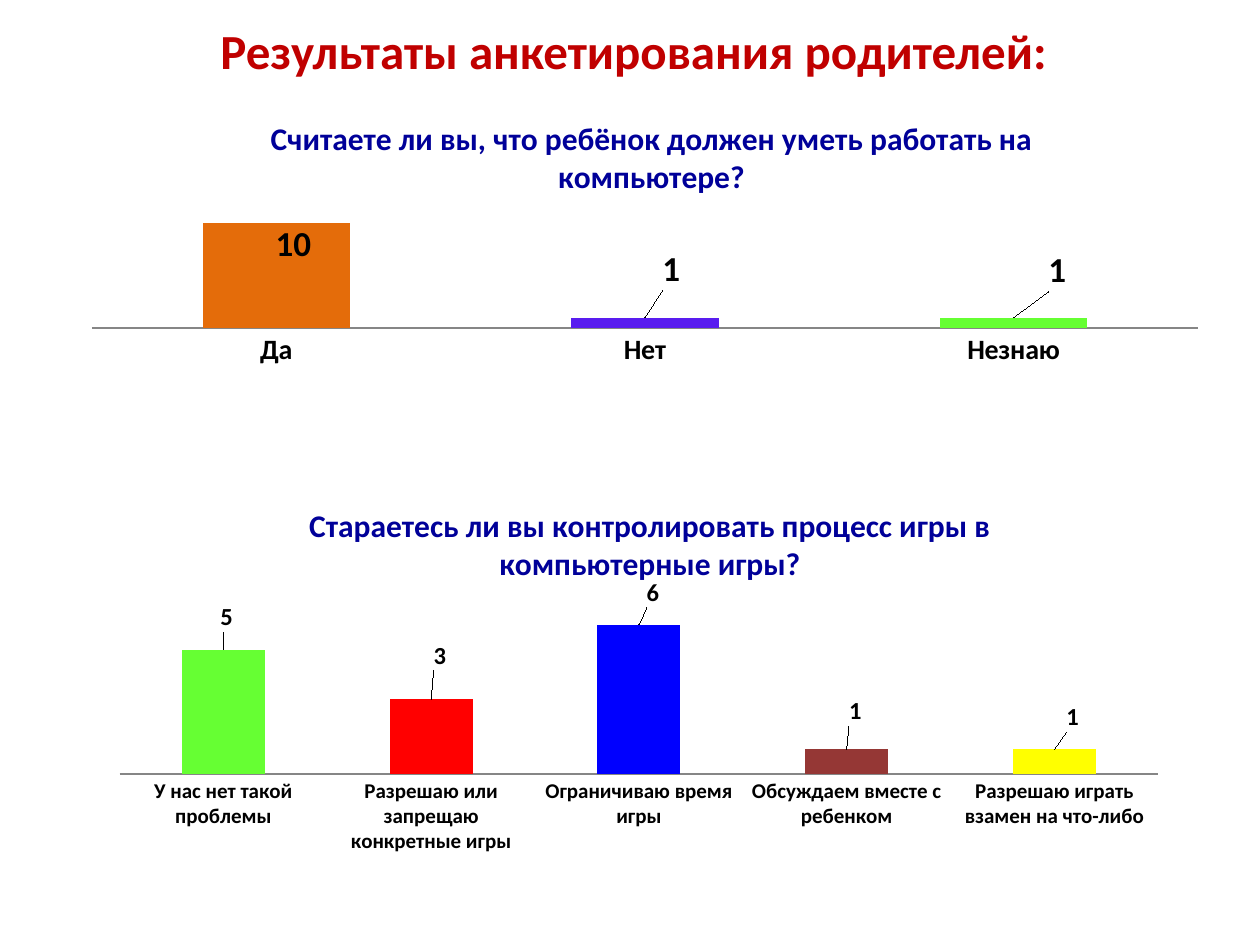
import pptx
import pptx.chart.data
import pptx.dml.color
import pptx.enum.chart
import pptx.enum.text
import pptx.oxml
import pptx.util

EMU_PER_PX = 914400 / 126
FONT = "Calibri"
COLORS = {
    "heading": "C00000", "question": "000099", "text": "000000", "axis": "868686",
    "orange": "E46C0A", "violet": "591DEF", "green": "66FF33", "red": "FF0000",
    "blue": "0000FF", "brown": "953735", "yellow": "FFFF00",
}


def style_font(font, size, color, bold=True):
    for name, value in {"name": FONT, "size": pptx.util.Pt(size), "bold": bold}.items():
        setattr(font, name, value)
    font.color.rgb = pptx.dml.color.RGBColor.from_string(COLORS[color])


def set_layout(parent, index, values, target=""):
    """Place a chart part by fractions of the chart size."""
    for old in parent.findall(pptx.oxml.ns.qn("c:layout")):
        parent.remove(old)
    tags = "".join(f'<c:{tag} val="{value}"/>' for tag, value in values.items())
    parent.insert(index, pptx.oxml.parse_xml(
        f'<c:layout {pptx.oxml.ns.nsdecls("c")}><c:manualLayout>'
        f'{target}{tags}</c:manualLayout></c:layout>'))


deck = pptx.Presentation()
deck.slide_width, deck.slide_height = pptx.util.Inches(10), pptx.util.Inches(7.5)
page = deck.slides.add_slide(deck.slide_layouts[5])

# Heading
title = page.shapes.title
for name, px in {"left": 73, "top": 16, "width": 1134, "height": 102}.items():
    setattr(title, name, round(px * EMU_PER_PX))
frame = title.text_frame
frame.margin_right = round(26 * EMU_PER_PX)
frame.margin_bottom = round(40 * EMU_PER_PX)
frame.vertical_anchor = pptx.enum.text.MSO_ANCHOR.MIDDLE
para = frame.paragraphs[0]
para.alignment = pptx.enum.text.PP_ALIGN.CENTER
span = para.add_run()
span.text = "Результаты анкетирования родителей:"
style_font(span.font, 28, "heading")

# Survey questions: each bar is (answer, votes, color, label shift in px)
charts = [
    {
        "question": "Считаете ли вы, что ребёнок должен уметь работать на компьютере?",
        "box": (69, 88, 1152, 286), "title_at": (0.17, 0.08), "plot": (0.4, 0.44),
        "maximum": 12, "axis_size": 16, "label_size": 20,
        "bars": [
            ("Да", 10, "orange", (17, 47)),
            ("Нет", 1, "violet", (26, -22)),
            ("Незнаю", 1, "green", (44, -21)),
        ],
    },
    {
        "question": "Стараетесь ли вы контролировать процесс игры в компьютерные игры?",
        "box": (98, 483, 1082, 378), "title_at": (0.19, 0.04), "plot": (0.31, 0.46),
        "maximum": 7, "axis_size": 12, "label_size": 14,
        "bars": [
            ("У нас нет такой проблемы", 5, "green", (3, -13)),
            ("Разрешаю или запрещаю конкретные игры", 3, "red", (9, -24)),
            ("Ограничиваю время игры", 6, "blue", (14, -12)),
            ("Обсуждаем вместе с ребенком", 1, "brown", (9, -18)),
            ("Разрешаю играть взамен на что-либо", 1, "yellow", (18, -12)),
        ],
    },
]

for survey in charts:
    bars = survey["bars"]
    data = pptx.chart.data.CategoryChartData()
    data.categories = [bar[0] for bar in bars]
    data.add_series("Series 1", [bar[1] for bar in bars])
    chart = page.shapes.add_chart(
        pptx.enum.chart.XL_CHART_TYPE.COLUMN_CLUSTERED,
        *[round(px * EMU_PER_PX) for px in survey["box"]], data).chart
    chart.has_legend = False
    style_font(chart.font, 10, "text", False)

    # Question above the bars
    chart.has_title = True
    para = chart.chart_title.text_frame.paragraphs[0]
    span = para.add_run()
    span.text = survey["question"]
    style_font(span.font, 18, "question")
    x, y = survey["title_at"]
    set_layout(chart.chart_title._element, 1,
               {"xMode": "edge", "yMode": "edge", "x": x, "y": y})

    # Plot area and axes
    y, height = survey["plot"]
    set_layout(chart._chartSpace.chart.plotArea, 0,
               {"xMode": "edge", "yMode": "edge", "x": 0.02, "y": y, "w": 0.96, "h": height},
               '<c:layoutTarget val="inner"/>')
    axis = chart.category_axis
    axis.major_tick_mark = pptx.enum.chart.XL_TICK_MARK.NONE
    axis.format.line.color.rgb = pptx.dml.color.RGBColor.from_string(COLORS["axis"])
    style_font(axis.tick_labels.font, survey["axis_size"], "text")
    for name, value in {"visible": False, "has_major_gridlines": False,
                        "minimum_scale": 0, "maximum_scale": survey["maximum"]}.items():
        setattr(chart.value_axis, name, value)

    # Bars with shifted value labels
    plot = chart.plots[0]
    plot.gap_width = 150
    plot.vary_by_categories = False
    for index, (answer, votes, color, shift) in enumerate(bars):
        point = plot.series[0].points[index]
        point.format.fill.solid()
        point.format.fill.fore_color.rgb = pptx.dml.color.RGBColor.from_string(COLORS[color])
        label = point.data_label
        style_font(label.font, survey["label_size"], "text")
        label.position = pptx.enum.chart.XL_LABEL_POSITION.OUTSIDE_END
        x, y = (round(move / size, 3) for move, size in zip(shift, survey["box"][2:]))
        set_layout(label._dLbl, 1, {"x": x, "y": y})

deck.save("out.pptx")
